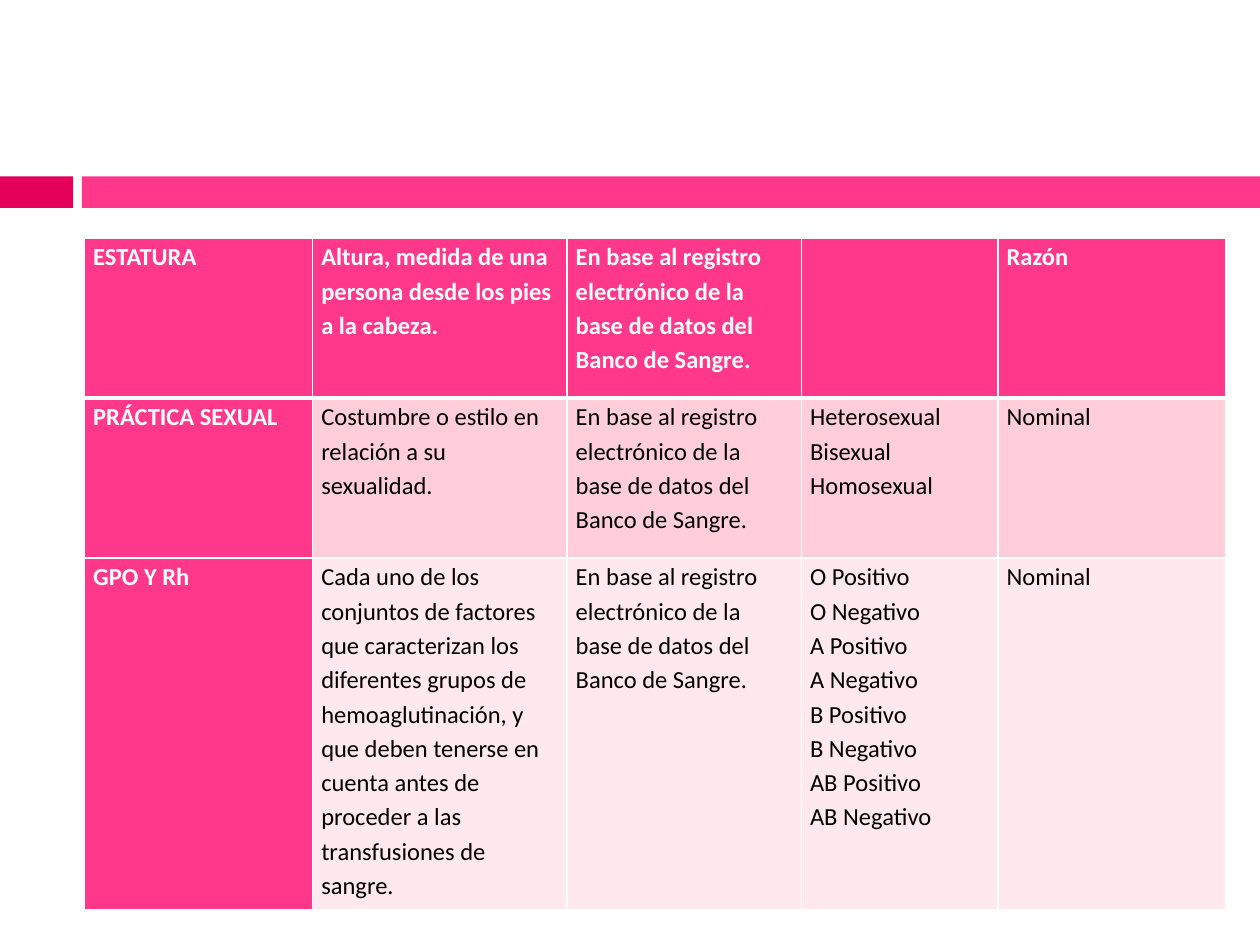
from dataclasses import dataclass
from itertools import product
from typing import Any

from lxml.etree import SubElement
from pptx import Presentation
from pptx.dml.color import RGBColor
from pptx.enum.shapes import MSO_SHAPE as Shape
from pptx.oxml.ns import qn
from pptx.util import Inches, Pt

PINK, CRIMSON, WHITE, BLACK = "FF388C", "E40059", "FFFFFF", "000000"
BAND_FILLS = {1: "FFCEDA", 2: "FFE8EE"}

REGISTRY = "En base al registro electrónico de la base de datos del Banco de Sangre."
BLOOD_TYPES = [f"{group} {sign}" for group, sign in
               product(("O", "A", "B", "AB"), ("Positivo", "Negativo"))]
VARIABLES = [
    ["ESTATURA", "Altura, medida de una persona desde los pies a la cabeza.",
     REGISTRY, "", "Razón"],
    ["PRÁCTICA SEXUAL", "Costumbre o estilo en relación a su sexualidad.",
     REGISTRY, "Heterosexual\nBisexual\nHomosexual", "Nominal"],
    ["GPO Y Rh",
     "Cada uno de los conjuntos de factores que caracterizan los diferentes "
     "grupos de hemoaglutinación, y que deben tenerse en cuenta antes de "
     "proceder a las transfusiones de sangre.",
     REGISTRY, "\n".join(BLOOD_TYPES), "Nominal"],
]
COLUMN_WIDTHS = [1.81, 2.02, 1.86, 1.56, 1.81]
ROW_HEIGHTS = [1.27, 1.27, 2.79]


def paint(fill, color):
    fill.solid()
    fill.fore_color.rgb = RGBColor.from_string(color)


def write(frame, text, *, font, size, color, bold=False, spacing=1.15):
    for index, line in enumerate(text.split("\n")):
        para = frame.add_paragraph() if index else frame.paragraphs[0]
        para.line_spacing = spacing
        para.font.size = Pt(size)
        if line:
            span = para.add_run()
            span.text = line
            span.font.name = font
            span.font.size = Pt(size)
            span.font.bold = bold
            paint(span.font.fill, color)


def add_borders(cell, color, widths):
    """Draw the left, right, top and bottom lines, widths in points."""
    properties = cell._tc.get_or_add_tcPr()
    for index, (side, width) in enumerate(zip("LRTB", widths)):
        line = SubElement(properties, qn(f"a:ln{side}"), w=str(Pt(width)))
        solid = SubElement(line, qn("a:solidFill"))
        SubElement(solid, qn("a:srgbClr"), val=color)
        properties.insert(index, line)  # lines come before the cell fill


@dataclass
class Painter:
    page: Any
    font: str = "Calibri"
    size: int = 14

    def bar(self, left, top, width, height, color):
        box = self.page.shapes.add_shape(
            Shape.RECTANGLE, Inches(left), Inches(top), Inches(width), Inches(height))
        box.shadow.inherit = False
        paint(box.fill, color)
        box.line.fill.background()

    def table(self, left, top, widths, heights, rows):
        grid = self.page.shapes.add_table(
            len(heights), len(widths), Inches(left), Inches(top),
            Inches(sum(widths)), Inches(sum(heights))).table
        for column, width in zip(grid.columns, widths):
            column.width = Inches(width)
        for row, height in zip(grid.rows, heights):
            row.height = Inches(height)
        for r, texts in enumerate(rows):
            for c, text in enumerate(texts):
                self.cell(grid.cell(r, c), text, r, c)

    def cell(self, cell, text, row, column):
        heading = row == 0 or column == 0
        cell.margin_left = cell.margin_right = Inches(0.07)
        cell.margin_top = cell.margin_bottom = 0
        paint(cell.fill, PINK if heading else BAND_FILLS[row])
        add_borders(cell, WHITE, (1, 1, 3 if row == 1 else 1, 3 if row == 0 else 1))
        write(cell.text_frame, text, font=self.font, size=self.size,
              color=WHITE if heading else BLACK, bold=heading)


def main():
    deck = Presentation()
    deck.slide_width, deck.slide_height = Inches(10), Inches(7.5)
    painter = Painter(deck.slides.add_slide(deck.slide_layouts[6]))

    # Divider band
    painter.bar(0, 1.4, 0.58, 0.25, CRIMSON)
    painter.bar(0.65, 1.4, 9.35, 0.25, PINK)

    # Table of variables
    painter.table(0.67, 1.89, COLUMN_WIDTHS, ROW_HEIGHTS, VARIABLES)

    deck.save("out.pptx")


if __name__ == "__main__":
    main()
